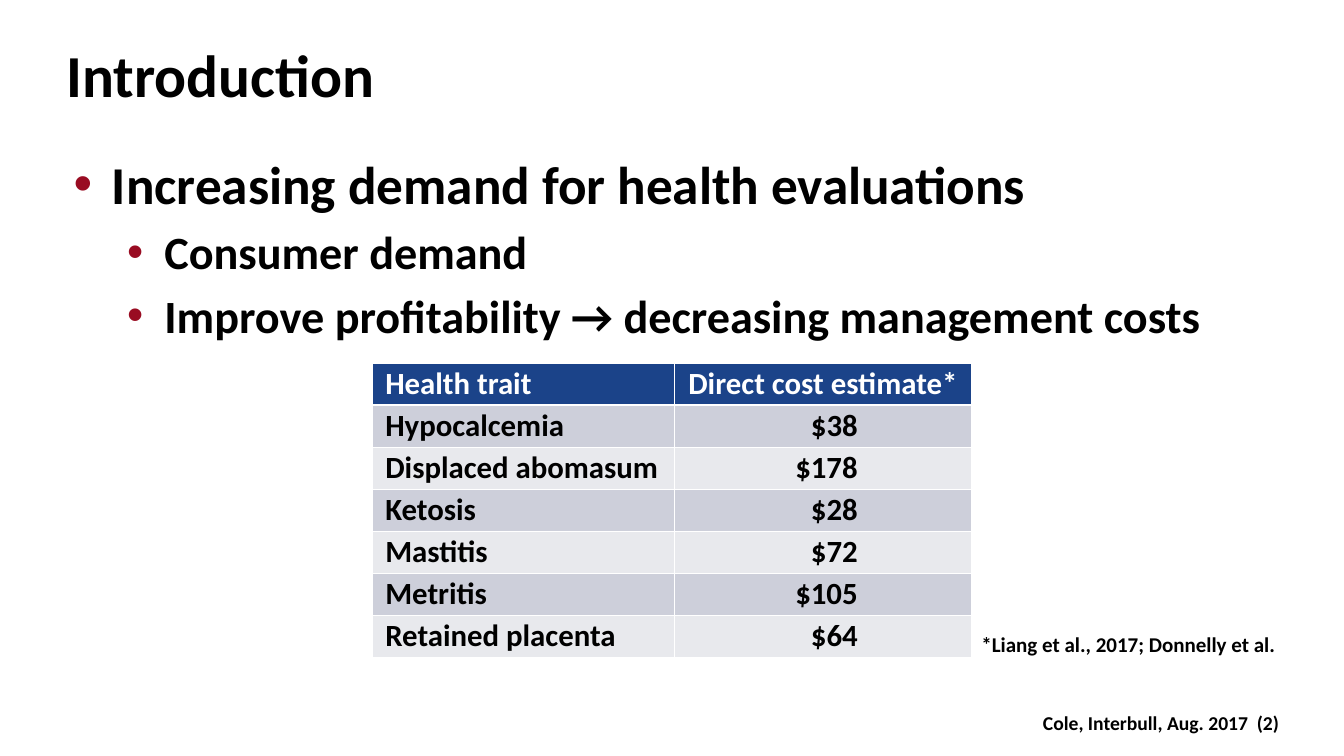
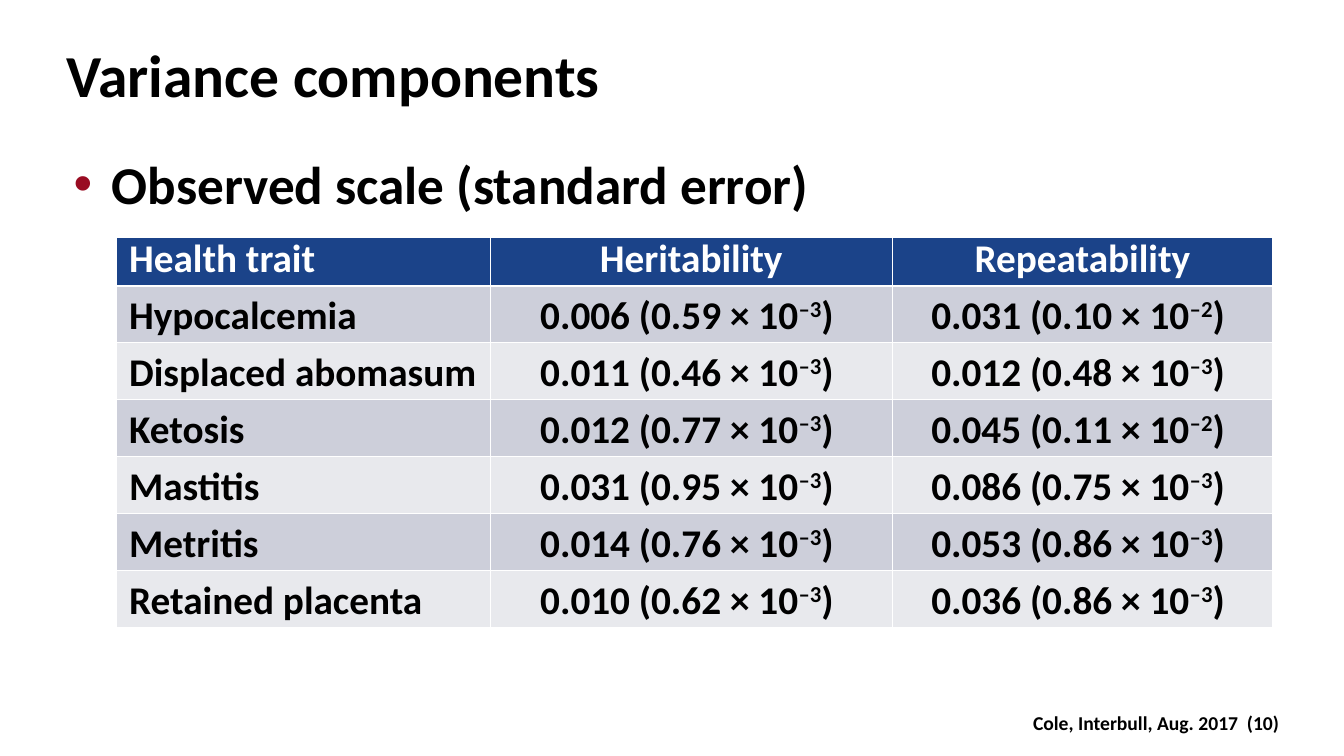
from pptx import Presentation
from pptx.dml.color import RGBColor
from pptx.enum.text import MSO_AUTO_SIZE, PP_ALIGN
from pptx.oxml import parse_xml
from pptx.oxml.ns import nsdecls
from pptx.util import Inches, Pt

LEFT, MID, RIGHT = PP_ALIGN.LEFT, PP_ALIGN.CENTER, PP_ALIGN.RIGHT
GROW = MSO_AUTO_SIZE.SHAPE_TO_FIT_TEXT
BLACK = RGBColor(0, 0, 0)
WHITE = RGBColor(0xFF, 0xFF, 0xFF)
RED = RGBColor(0x99, 0x0C, 0x22)
BLUE = RGBColor(0x1B, 0x43, 0x89)
BANDS = RGBColor(0xCD, 0xCF, 0xDA), RGBColor(0xE8, 0xE9, 0xED)
FONT = "Calibri"
LEVELS = [
    {"size": 76, "left": 0.89, "hang": 0.76},
    {"size": 66, "left": 1.93, "hang": 0.74},
]

TRAITS = ["Hypocalcemia", "Displaced abomasum", "Ketosis", "Mastitis",
          "Metritis", "Retained placenta"]
COSTS = ["$38", "$178", "$28", "$72", "$105", "$64"]
HERIT = [("0.006", "0.59", 3), ("0.011", "0.46", 3), ("0.012", "0.77", 3),
         ("0.031", "0.95", 3), ("0.014", "0.76", 3), ("0.010", "0.62", 3)]
REPEAT = [("0.031", "0.10", 2), ("0.012", "0.48", 3), ("0.045", "0.11", 2),
          ("0.086", "0.75", 3), ("0.053", "0.86", 3), ("0.036", "0.86", 3)]

SLIDES = [
    {
        "title": "Introduction",
        "page": 2,
        "body": [
            (0, "Increasing demand for health evaluations"),
            (1, "Consumer demand"),
            (1, "Improve profitability → decreasing management costs"),
        ],
        "tall": 3.84,
        "note": "*Liang et al., 2017; Donnelly et al.",
        "table": {
            "at": (7.39, 7.2), "size": 44, "cols": [5.99, 5.88],
            "rows": (0.83, 0.83), "lines": (None, None),
            "align": RIGHT, "inset": 2.25,
            "head": ["Health trait", "Direct cost estimate*"],
            "data": list(zip(TRAITS, COSTS)),
        },
    },
    {
        "title": "Variance components",
        "page": 10,
        "body": [(0, "Observed scale (standard error)")],
        "tall": 1.28,
        "note": None,
        "table": {
            "at": (2.31, 4.71), "size": 56, "cols": [7.41, 7.98, 7.53],
            "rows": (0.96, 1.13), "lines": (Pt(62), Pt(74)),
            "align": MID, "inset": 0.25,
            "head": ["Health trait", "Heritability", "Repeatability"],
            "data": list(zip(TRAITS, HERIT, REPEAT)),
        },
    },
]


def set_all(target, values):
    """Set each named attribute on the target."""
    for name, value in values.items():
        setattr(target, name, value)


def add_run(para, text, size, color=BLACK, base=0):
    """Add a bold run, raised by base percent."""
    run = para.add_run()
    run.text = text
    set_all(run.font, {"name": FONT, "size": Pt(size), "bold": True})
    run.font.color.rgb = color
    if base:
        run.font._element.set("baseline", str(base * 1000))


def add_box(slide, at, inset=None):
    """Add a wrapping text box and return its frame."""
    frame = slide.shapes.add_textbox(*map(Inches, at)).text_frame
    set_all(frame, {"word_wrap": True, "auto_size": GROW})
    if inset is not None:
        sides = ("left", "top", "right", "bottom")
        set_all(frame, {f"margin_{side}": Inches(inset) for side in sides})
    return frame


def add_line(slide, at, text, size, align=LEFT, inset=None):
    """Add a box with one line of text."""
    para = add_box(slide, at, inset).paragraphs[0]
    para.alignment = align
    add_run(para, text, size)


def add_body(slide, items, tall):
    """Add the bulleted list."""
    frame = add_box(slide, (1.33, 3, 24, tall), 0)
    for i, (level, text) in enumerate(items):
        para = frame.add_paragraph() if i else frame.paragraphs[0]
        form = LEVELS[level]
        props = para._p.get_or_add_pPr()
        props.set("marL", str(Inches(form["left"])))
        props.set("indent", str(-Inches(form["hang"])))
        for xml in (f'<a:buClr {nsdecls("a")}><a:srgbClr val="{RED}"/></a:buClr>',
                    f'<a:buFont {nsdecls("a")} typeface="Arial"/>',
                    f'<a:buChar {nsdecls("a")} char="•"/>'):
            props.append(parse_xml(xml))
        set_all(para, {"level": level, "space_after": Pt(12)})
        add_run(para, text, form["size"])


def add_edges(cell, row):
    """Draw white cell borders, thick below the header."""
    props = cell._tc.get_or_add_tcPr()
    thick = {"T": row == 1, "B": row == 0}
    for side in "LRTB":
        width = Pt(3 if thick.get(side) else 1)
        props.append(parse_xml(
            f'<a:ln{side} {nsdecls("a")} w="{width}"><a:solidFill>'
            f'<a:srgbClr val="{WHITE}"/></a:solidFill></a:ln{side}>'))


def add_table(slide, spec):
    """Add the banded trait table."""
    rows = [spec["head"], *spec["data"]]
    high, step = spec["rows"]
    tall = high + step * len(spec["data"])
    place = map(Inches, (*spec["at"], sum(spec["cols"]), tall))
    grid = slide.shapes.add_table(len(rows), len(spec["cols"]), *place).table
    for col, wide in zip(grid.columns, spec["cols"]):
        col.width = Inches(wide)
    for r, row in enumerate(rows):
        grid.rows[r].height = Inches(step if r else high)
        for c, value in enumerate(row):
            cell = grid.cell(r, c)
            right = spec["inset"] if r and c else 0.25
            set_all(cell, {"margin_left": Inches(0.25), "margin_right": Inches(right),
                           "margin_top": Inches(0.05), "margin_bottom": Inches(0.05)})
            add_edges(cell, r)
            cell.fill.solid()
            cell.fill.fore_color.rgb = BANDS[(r - 1) % 2] if r else BLUE
            para = cell.text_frame.paragraphs[0]
            align = (spec["align"] if r else MID) if c else LEFT
            set_all(para, {"alignment": align,
                           "line_spacing": spec["lines"][min(r, 1)]})
            parts = [(value, 0)]
            if isinstance(value, tuple):
                mean, error, power = value
                parts = [(f"{mean} ({error} × 10", 0), (f"–{power}", 30), (") ", 0)]
            for text, base in parts:
                add_run(para, text, spec["size"], BLACK if r else WHITE, base)


def main():
    """Build and save the slides."""
    deck = Presentation()
    set_all(deck, {"slide_width": Inches(26.65), "slide_height": Inches(15)})
    for item in SLIDES:
        slide = deck.slides.add_slide(deck.slide_layouts[6])
        add_line(slide, (20.11, 14.06, 5.35, 0.57),
                 f"Cole, Interbull, Aug. 2017  ({item['page']})", 28, RIGHT)
        add_line(slide, (1.32, 0.75, 24, 1.43), item["title"], 85, inset=0)
        add_body(slide, item["body"], item["tall"])
        if item["note"]:
            add_line(slide, (19.36, 12.49, 6.61, 0.61), item["note"], 30)
        add_table(slide, item["table"])
    deck.save("out.pptx")


if __name__ == "__main__":
    main()
